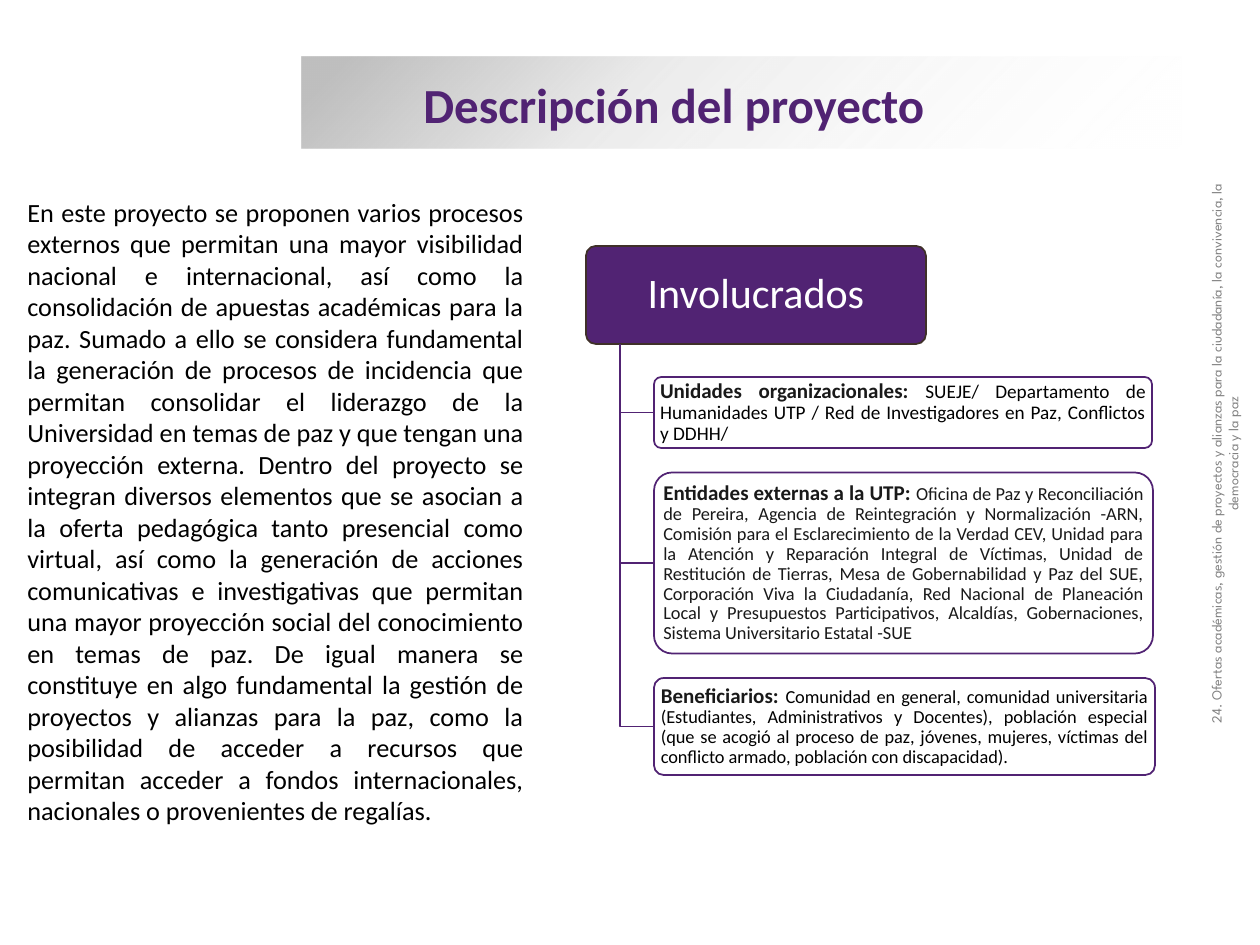
from lxml import etree
from pptx import Presentation
from pptx.dml.color import RGBColor
from pptx.enum.shapes import MSO_SHAPE as Preset
from pptx.enum.text import MSO_ANCHOR as Anchor, MSO_AUTO_SIZE as AutoSize, PP_ALIGN as Align
from pptx.oxml import parse_xml
from pptx.oxml.ns import nsdecls, qn
from pptx.util import Pt

PX = 914400 / 126
COLORS = {"purple": "512373", "brown": "3F3029", "white": "FFFFFF", "black": "000000",
          "ink": "191919", "gray": "808080", "silver": "BFBFBF"}

TITLE = "Descripción del proyecto"
SIDE_NOTE = ("24. Ofertas académicas, gestión de proyectos y alianzas para la ciudadanía, "
             "la convivencia, la democracia y la paz")
DESCRIPTION = [
    "En este proyecto se proponen varios procesos externos que permitan una mayor visibilidad "
    "nacional e internacional, así como la consolidación de apuestas académicas para la paz.",
    "Sumado a ello se considera fundamental la generación de procesos de incidencia que permitan "
    "consolidar el liderazgo de la Universidad en temas de paz y que tengan una proyección externa.",
    "Dentro del proyecto se integran diversos elementos que se asocian a la oferta pedagógica tanto "
    "presencial como virtual, así como la generación de acciones comunicativas e investigativas que "
    "permitan una mayor proyección social del conocimiento en temas de paz.",
    "De igual manera se constituye en algo fundamental la gestión de proyectos y alianzas para la "
    "paz, como la posibilidad de acceder a recursos que permitan acceder a fondos internacionales, "
    "nacionales o provenientes de regalías.",
]
HEADING = "Involucrados"
GROUPS = [
    ("Unidades organizacionales: ",
     "SUEJE/ Departamento de Humanidades UTP / Red de Investigadores en Paz, Conflictos y DDHH/",
     11, "black", 498, 71),
    ("Entidades externas a la UTP: ",
     "Oficina de Paz y Reconciliación de Pereira, Agencia de Reintegración y Normalización -ARN, "
     "Comisión para el Esclarecimiento de la Verdad CEV, Unidad para la Atención y Reparación "
     "Integral de Víctimas, Unidad de Restitución de Tierras, Mesa de Gobernabilidad y Paz del SUE, "
     "Corporación Viva la Ciudadanía, Red Nacional de Planeación Local y Presupuestos "
     "Participativos, Alcaldías, Gobernaciones, Sistema Universitario Estatal -SUE",
     10.5, "ink", 499, 181),
    ("Beneficiarios: ",
     "Comunidad en general, comunidad universitaria (Estudiantes, Administrativos y Docentes), "
     "población especial (que se acogió al proceso de paz, jóvenes, mujeres, víctimas del conflicto "
     "armado, población con discapacidad).",
     10.5, "black", 501, 97),
]
BANNER_STOPS = [(5, "silver", 100), (37, "silver", 31), (100, "white", 0)]

HEADING_BOX = (586, 246, 340, 98)
TRUNK_X, GROUP_X, GROUP_Y, GROUP_GAP = 620, 654, 377, 24.5


def px(value):
    return round(value * PX)


def rgb(name):
    return RGBColor.from_string(COLORS[name])


def write(frame, runs, align, font="Calibri", spacing=None):
    frame.word_wrap = True
    paragraph = frame.paragraphs[0]
    paragraph.alignment = align
    if spacing:
        paragraph.line_spacing = spacing
    for text, size, color, bold in runs:
        run = paragraph.add_run()
        run.text = text
        run.font.name, run.font.size, run.font.bold = font, Pt(size), bold
        run.font.color.rgb = rgb(color)


def add_text(box, runs, align, **style):
    label = slide.shapes.add_textbox(*map(px, box))
    write(label.text_frame, runs, align, **style)
    label.text_frame.auto_size = AutoSize.SHAPE_TO_FIT_TEXT
    return label


def add_card(box, fill, line, runs, align, inset, alpha=None):
    card = slide.shapes.add_shape(Preset.ROUNDED_RECTANGLE, *map(px, box))
    card.shadow.inherit = False
    card.adjustments[0] = 0.1
    card.fill.solid()
    card.fill.fore_color.rgb = rgb(fill)
    if alpha:
        color = card._element.spPr.find(qn("a:solidFill"))[0]
        etree.SubElement(color, qn("a:alpha")).set("val", str(alpha * 1000))
    card.line.color.rgb = rgb(line)
    card.line.width = Pt(1)
    frame = card.text_frame
    frame.vertical_anchor = Anchor.MIDDLE
    frame.margin_left = frame.margin_right = px(inset[0])
    frame.margin_top = frame.margin_bottom = px(inset[1])
    write(frame, runs, align, spacing=0.9)


def add_branch(top, middle):
    outline = slide.shapes.build_freeform(px(TRUNK_X), px(top))
    outline.add_line_segments([(px(TRUNK_X), px(middle)), (px(GROUP_X), px(middle))], close=False)
    branch = outline.convert_to_shape()
    branch.shadow.inherit = False
    branch.fill.background()
    branch.line.color.rgb = rgb("purple")
    branch.line.width = Pt(1)


def add_banner(box):
    banner = slide.shapes.add_shape(Preset.RECTANGLE, *map(px, box))
    banner.shadow.inherit = False
    banner.line.fill.background()
    stops = "".join(
        f'<a:gs pos="{place * 1000}"><a:srgbClr val="{COLORS[color]}">'
        f'<a:alpha val="{alpha * 1000}"/></a:srgbClr></a:gs>'
        for place, color, alpha in BANNER_STOPS)
    gradient = parse_xml(f'<a:gradFill {nsdecls("a")}><a:gsLst>{stops}</a:gsLst>'
                         '<a:lin ang="2700000" scaled="0"/></a:gradFill>')
    banner._element.spPr.find(qn("a:prstGeom")).addnext(gradient)


deck = Presentation()
deck.slide_width, deck.slide_height = px(1260), px(945)
slide = deck.slides.add_slide(deck.slide_layouts[6])

add_banner((302, 57, 879, 91))
title = add_text((411, 68, 781, 72), [(TITLE, 28, "purple", True)], Align.LEFT)
title.text_frame.vertical_anchor = Anchor.MIDDLE

add_card(HEADING_BOX, "purple", "brown", [(HEADING, 24, "white", False)], Align.CENTER, (6, 4))
trunk_top = HEADING_BOX[1] + HEADING_BOX[3]
top = GROUP_Y
for name, members, size, color, width, height in GROUPS:
    add_branch(trunk_top, top + height / 2)
    add_card((GROUP_X, top, width, height), "white", "purple",
             [(name, 12, "ink", True), (members, size, color, False)],
             Align.JUSTIFY, (4, 3), alpha=90)
    top += height + GROUP_GAP

add_text((15, 190, 521, 649), [(" ".join(DESCRIPTION), 15, "black", False)], Align.JUSTIFY)
side_note = add_text((920, 430, 610, 47), [(SIDE_NOTE, 8, "gray", False)], Align.CENTER,
                     font="League Spartan")
side_note.rotation = 270

deck.save("out.pptx")
